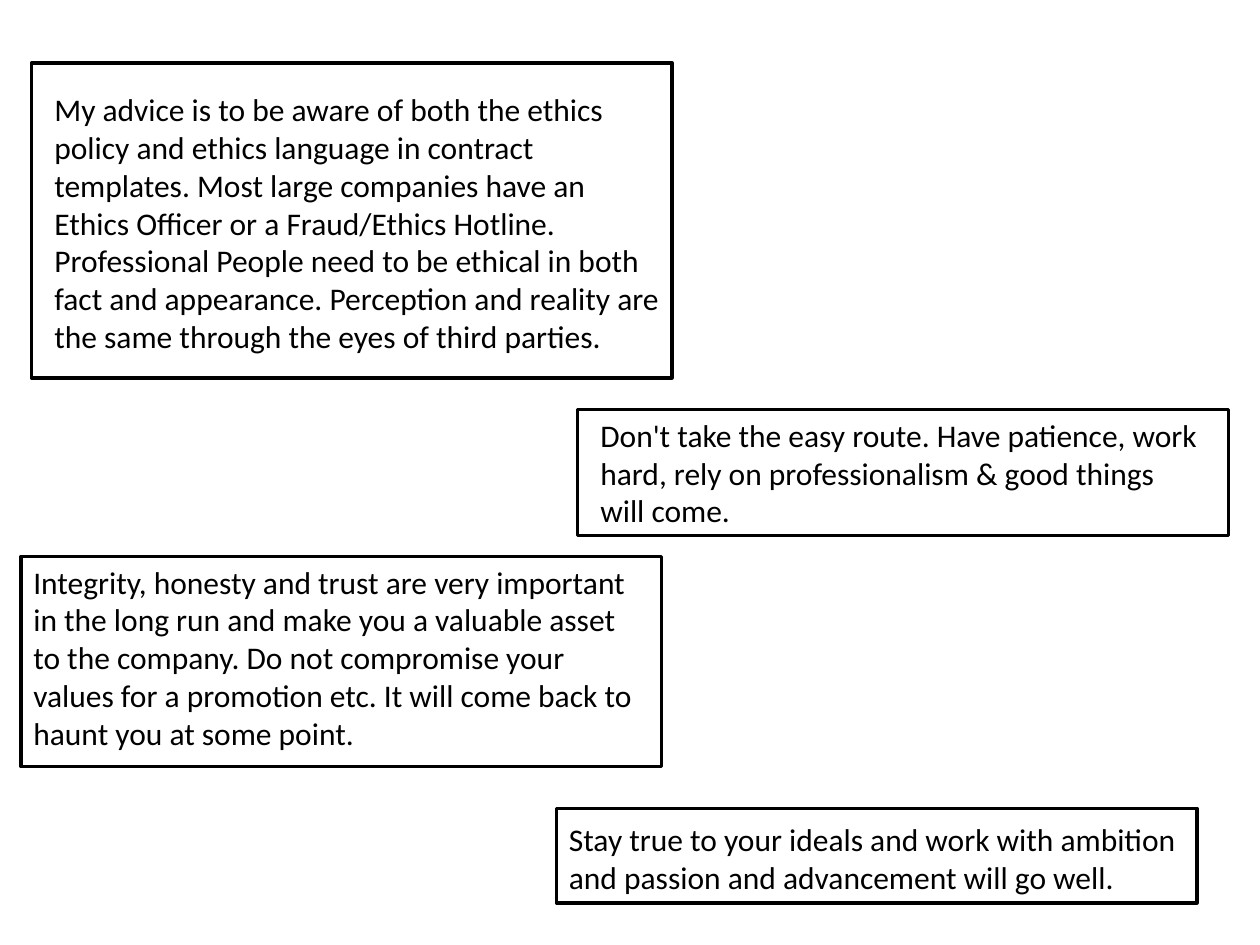
from dataclasses import dataclass
from typing import NamedTuple

from pptx import Presentation
from pptx.dml.color import RGBColor
from pptx.enum.shapes import MSO_SHAPE
from pptx.enum.text import MSO_AUTO_SIZE
from pptx.slide import Slide
from pptx.util import Inches, Pt


@dataclass(frozen=True)
class Theme:
    ink: RGBColor = RGBColor(0, 0, 0)
    font: str = "Calibri"
    size: Pt = Pt(18)
    line: Pt = Pt(2)


class Box(NamedTuple):
    col: float
    row: float
    cols: float
    rows: float


class Quote(NamedTuple):
    words: str
    text: Box
    frame: Box


THEME = Theme()
WIDTH, HEIGHT = Inches(10), Inches(7.5)
COLS, ROWS = 120, 90

QUOTES = [
    Quote(
        "My advice is to be aware of both the ethics policy and ethics language "
        "in contract templates. Most large companies have an Ethics Officer or a "
        "Fraud/Ethics Hotline. Professional People need to be ethical in both fact "
        "and appearance. Perception and reality are the same through the eyes of "
        "third parties.",
        Box(4, 8, 60, 26.6),
        Box(3, 6, 61, 30),
    ),
    Quote(
        "Don't take the easy route. Have patience, work hard, rely on "
        "professionalism & good things will come.",
        Box(56, 39, 60, 12.1),
        Box(55, 39, 62, 12),
    ),
    Quote(
        "Integrity, honesty and trust are very important in the long run and make "
        "you a valuable asset to the company. Do not compromise your values for a "
        "promotion etc. It will come back to haunt you at some point.",
        Box(2, 53, 60, 19.4),
        Box(2, 53, 61, 20),
    ),
    Quote(
        "Stay true to your ideals and work with ambition and passion and "
        "advancement will go well.",
        Box(53, 77.5, 64, 8.5),
        Box(53, 77, 61, 9),
    ),
]


def place(box: Box) -> tuple[int, int, int, int]:
    wide, high = WIDTH / COLS, HEIGHT / ROWS
    return (
        round(box.col * wide),
        round(box.row * high),
        round(box.cols * wide),
        round(box.rows * high),
    )


def write(slide: Slide, quote: Quote) -> None:
    frame = slide.shapes.add_textbox(*place(quote.text)).text_frame
    frame.word_wrap = True
    frame.auto_size = MSO_AUTO_SIZE.SHAPE_TO_FIT_TEXT
    frame.text = quote.words
    font = frame.paragraphs[0].runs[0].font
    font.name = THEME.font
    font.size = THEME.size
    font.color.rgb = THEME.ink


def outline(slide: Slide, quote: Quote) -> None:
    shape = slide.shapes.add_shape(MSO_SHAPE.RECTANGLE, *place(quote.frame))
    shape.shadow.inherit = False
    shape.fill.background()
    shape.line.color.rgb = THEME.ink
    shape.line.width = THEME.line


def main() -> None:
    deck = Presentation()
    deck.slide_width, deck.slide_height = WIDTH, HEIGHT
    slide = deck.slides.add_slide(deck.slide_layouts[6])
    for quote in QUOTES:
        write(slide, quote)
    for quote in QUOTES:
        outline(slide, quote)
    deck.save("out.pptx")


if __name__ == "__main__":
    main()
